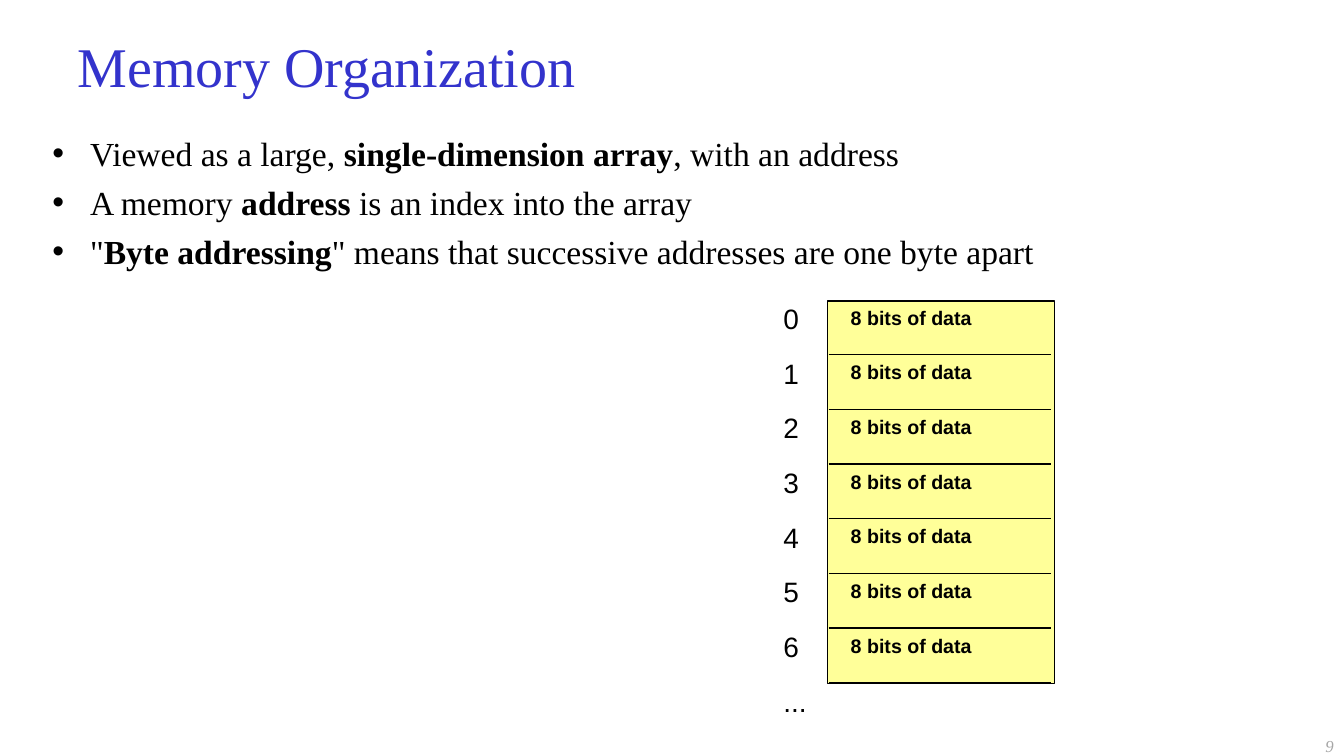
from lxml.etree import SubElement
from pptx import Presentation
from pptx.dml.color import RGBColor
from pptx.enum.shapes import MSO_CONNECTOR, MSO_SHAPE
from pptx.enum.text import MSO_ANCHOR, PP_ALIGN
from pptx.oxml.ns import qn
from pptx.util import Cm, Pt

SERIF = "Times New Roman"
SANS = "Arial"
BLACK = "000000"
ROW_COUNT = 7
ROW_HEIGHT = 1.378
BULLETS = [
    [("Viewed as a large, ", False), ("single-dimension array", True),
     (", with an address", False)],
    [("A memory ", False), ("address", True),
     (" is an index into the array", False)],
    [('"', False), ("Byte addressing", True),
     ('" means that successive addresses are one byte apart', False)],
]


def color(hex_string):
    return RGBColor.from_string(hex_string)


def add_run(paragraph, text, font, size, hex_color=BLACK, bold=False, italic=False):
    run = paragraph.add_run()
    run.text = text
    run.font.name = font
    run.font.size = Pt(size)
    run.font.color.rgb = color(hex_color)
    run.font.bold = bold
    run.font.italic = italic


def add_text_box(shapes, left, top, width, height):
    text_frame = shapes.add_textbox(Cm(left), Cm(top), Cm(width), Cm(height)).text_frame
    text_frame.word_wrap = True
    return text_frame


def set_title(slide, text):
    title = slide.shapes.title
    title.left, title.top, title.width, title.height = Cm(1.7), Cm(0.61), Cm(30.48), Cm(2.08)
    title.text_frame.vertical_anchor = MSO_ANCHOR.MIDDLE
    paragraph = title.text_frame.paragraphs[0]
    paragraph.alignment = PP_ALIGN.LEFT
    add_run(paragraph, text, SERIF, 40, "3333CC")


def set_bullet(paragraph):
    """Give the paragraph a round bullet with a hanging indent."""
    properties = paragraph._p.get_or_add_pPr()
    properties.set("marL", str(Cm(0.95)))
    properties.set("indent", str(-Cm(0.95)))
    SubElement(properties, qn("a:buFont")).set("typeface", SANS)
    SubElement(properties, qn("a:buChar")).set("char", "•")


def add_bullets(slide, bullets):
    text_frame = add_text_box(slide.shapes, 1.07, 3.23, 30.48, 14.96)
    for index, runs in enumerate(bullets):
        paragraph = text_frame.add_paragraph() if index else text_frame.paragraphs[0]
        paragraph.space_before = Pt(6 if index else 0)
        set_bullet(paragraph)
        for text, bold in runs:
            add_run(paragraph, text, SERIF, 24, bold=bold)


def add_page_number(slide, number):
    text_frame = add_text_box(slide.shapes, 25.96, 18.54, 7.9, 0.51)
    text_frame.vertical_anchor = MSO_ANCHOR.MIDDLE
    paragraph = text_frame.paragraphs[0]
    paragraph.alignment = PP_ALIGN.RIGHT
    add_run(paragraph, number, SERIF, 12, "A6A6A6", italic=True)


def add_memory_block(shapes):
    block = shapes.add_shape(MSO_SHAPE.RECTANGLE, Cm(20.85), Cm(7.59), Cm(5.72), Cm(9.63))
    block.shadow.inherit = False
    block.fill.solid()
    block.fill.fore_color.rgb = color("FFFF99")
    block.line.color.rgb = color(BLACK)
    block.line.width = Pt(1)


def add_row_line(shapes, top):
    line = shapes.add_connector(MSO_CONNECTOR.STRAIGHT, Cm(20.88), Cm(top), Cm(26.49), Cm(top))
    line.line.color.rgb = color(BLACK)
    line.line.width = Pt(1)
    SubElement(line._element.spPr, qn("a:effectLst"))


def add_label(shapes, box, text, size, line_spacing, bold=False):
    text_frame = add_text_box(shapes, *box)
    text_frame.margin_left = text_frame.margin_right = Cm(0.05)
    text_frame.margin_top = text_frame.margin_bottom = Cm(0.08)
    paragraph = text_frame.paragraphs[0]
    paragraph.line_spacing = Pt(line_spacing)
    add_run(paragraph, text, SANS, size, bold=bold)


def add_memory_diagram(slide):
    shapes = slide.shapes.add_group_shape().shapes
    add_memory_block(shapes)
    offsets = [row * ROW_HEIGHT for row in range(ROW_COUNT + 1)]
    for offset in offsets[:ROW_COUNT]:
        add_row_line(shapes, 8.94 + offset)
    for row, offset in enumerate(offsets):
        address = str(row) if row < ROW_COUNT else "..."
        add_label(shapes, (19.69, 7.62 + offset, 2.54, 1.57), address, 20, 21)
    for offset in offsets[:ROW_COUNT]:
        add_label(shapes, (21.39, 7.72 + offset, 6.48, 1.22), "8 bits of data", 14, 14, bold=True)


def main():
    presentation = Presentation()
    presentation.slide_width = Cm(33.87)
    presentation.slide_height = Cm(19.05)
    slide = presentation.slides.add_slide(presentation.slide_layouts[5])
    set_title(slide, "Memory Organization")
    add_bullets(slide, BULLETS)
    add_page_number(slide, "9")
    add_memory_diagram(slide)
    presentation.save("out.pptx")


if __name__ == "__main__":
    main()
